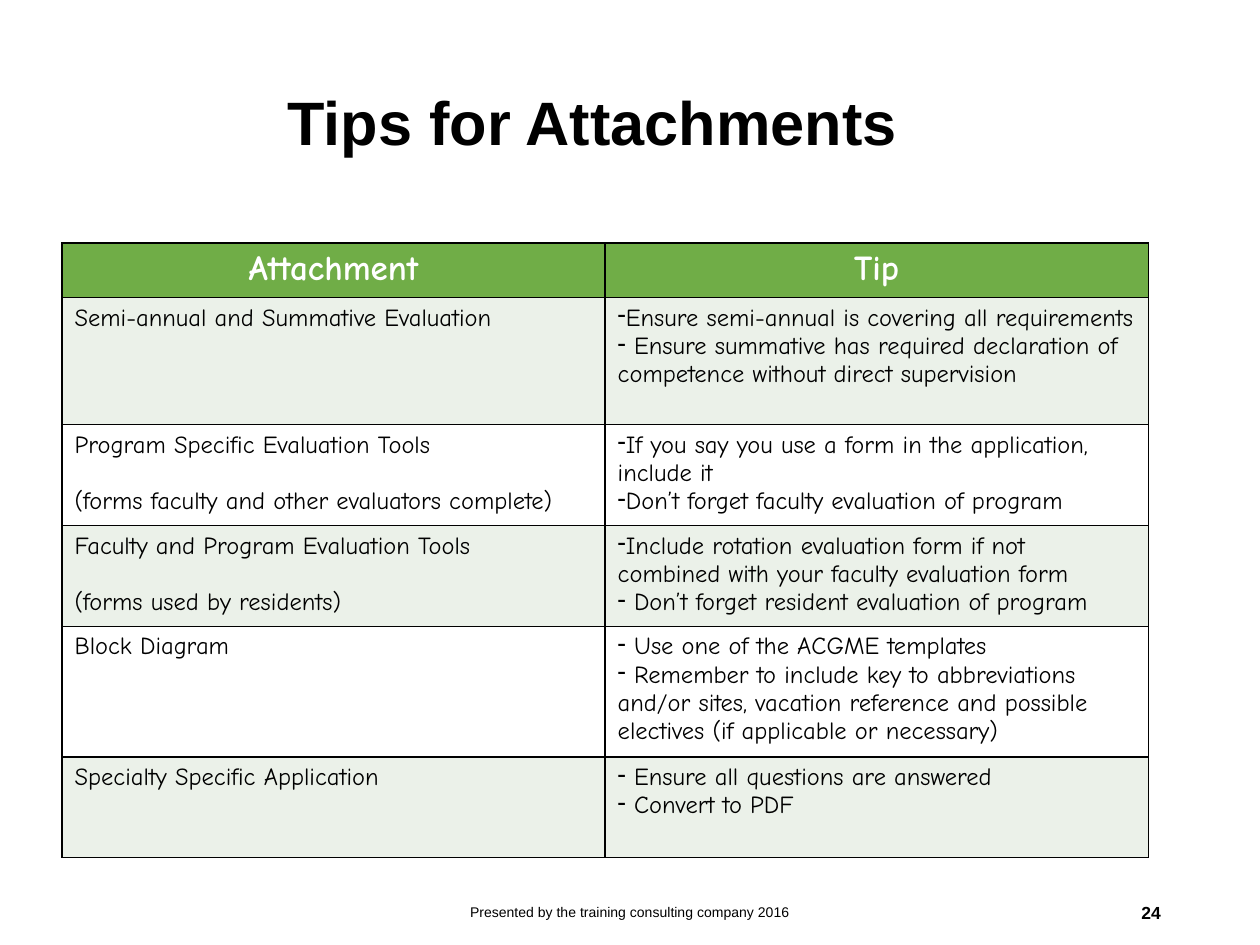
from lxml.etree import SubElement
from pptx import Presentation
from pptx.dml.color import RGBColor
from pptx.enum.text import MSO_ANCHOR, PP_ALIGN
from pptx.oxml.ns import qn
from pptx.util import Cm, Pt

COLORS = {
    "black": "000000",
    "white": "FFFFFF",
    "header": "70AD47",
    "band": "EBF1E9",
}
HEADINGS = ["Attachment", "Tip"]
ROWS = [
    (["Semi-annual and Summative Evaluation"],
     ["Ensure semi-annual is covering all requirements",
      " Ensure summative has required declaration of competence without direct supervision"]),
    (["Program Specific Evaluation Tools",
      "(forms faculty and other evaluators complete)"],
     ["If you say you use a form in the application, include it",
      "Don’t forget faculty evaluation of program"]),
    (["Faculty and Program Evaluation Tools",
      "(forms used by residents)"],
     ["Include rotation evaluation form if not combined with your faculty evaluation form",
      " Don’t forget resident evaluation of program"]),
    (["Block Diagram"],
     [" Use one of the ACGME templates",
      " Remember to include key to abbreviations and/or sites, vacation reference "
      "and possible electives (if applicable or necessary)"]),
    (["Specialty Specific Application"],
     [" Ensure all questions are answered",
      " Convert to PDF"]),
]
ROW_HEIGHTS = [1.05, 2.56, 2.03, 2.03, 2.56, 2.03]
COLUMN_WIDTH = 10.95


def add_text(paragraph, text, size, color="black", font="Arial", bold=False):
    run = paragraph.add_run()
    run.text = text
    run.font.name = font
    run.font.size = Pt(size)
    run.font.bold = bold
    run.font.color.rgb = RGBColor.from_string(COLORS[color])


def add_title(slide, text):
    title = slide.shapes.title
    title.left, title.top, title.width, title.height = Cm(5.54), Cm(0.69), Cm(18.14), Cm(3.68)
    title.text_frame.vertical_anchor = MSO_ANCHOR.MIDDLE
    paragraph = title.text_frame.paragraphs[0]
    paragraph.alignment = PP_ALIGN.LEFT
    paragraph.line_spacing = 0.9
    add_text(paragraph, text, 35, bold=True)


def add_footer(slide, left, width, text, size, alignment, bold=False):
    shape = slide.shapes.add_textbox(Cm(left), Cm(17.88), Cm(width), Cm(1.02))
    shape.text_frame.word_wrap = True
    shape.text_frame.vertical_anchor = MSO_ANCHOR.MIDDLE
    paragraph = shape.text_frame.paragraphs[0]
    paragraph.alignment = alignment
    add_text(paragraph, text, size, bold=bold)


def add_dash(paragraph):
    properties = paragraph._p.get_or_add_pPr()
    properties.set("marL", "0")
    properties.set("indent", "0")
    SubElement(properties, qn("a:buChar")).set("char", "-")


def style_cell(cell, fill):
    properties = cell._tc.get_or_add_tcPr()
    for side in ("lnL", "lnR", "lnT", "lnB"):
        line = SubElement(properties, qn(f"a:{side}"), w=str(Pt(1)))
        solid = SubElement(line, qn("a:solidFill"))
        SubElement(solid, qn("a:srgbClr"), val=COLORS["black"])
    cell.fill.solid()
    cell.fill.fore_color.rgb = RGBColor.from_string(COLORS[fill])


def fill_heading(cell, text):
    style_cell(cell, "header")
    paragraph = cell.text_frame.paragraphs[0]
    paragraph.alignment = PP_ALIGN.CENTER
    add_text(paragraph, text, 20, "white", "Comic Neue", True)


def fill_body(cell, lines, fill, dashed):
    style_cell(cell, fill)
    frame = cell.text_frame
    for index, text in enumerate(lines):
        paragraph = frame.add_paragraph() if index else frame.paragraphs[0]
        if dashed:
            add_dash(paragraph)
        elif index:
            paragraph.space_before = Pt(16)
        add_text(paragraph, text, 14, font="Comic Neue")


def add_tips_table(slide):
    frame = slide.shapes.add_table(
        len(ROW_HEIGHTS), len(HEADINGS), Cm(1.25), Cm(4.9),
        Cm(COLUMN_WIDTH * len(HEADINGS)), Cm(sum(ROW_HEIGHTS)))
    table = frame.table
    for column in table.columns:
        column.width = Cm(COLUMN_WIDTH)
    for row, height in zip(table.rows, ROW_HEIGHTS):
        row.height = Cm(height)
    for index, heading in enumerate(HEADINGS):
        fill_heading(table.cell(0, index), heading)
    for index, (attachment, tips) in enumerate(ROWS, start=1):
        fill = "band" if index % 2 else "white"
        fill_body(table.cell(index, 0), attachment, fill, False)
        fill_body(table.cell(index, 1), tips, fill, True)


def main():
    presentation = Presentation()
    presentation.slide_width = Cm(25.4)
    presentation.slide_height = Cm(19.05)
    slide = presentation.slides.add_slide(presentation.slide_layouts[5])
    add_title(slide, "Tips for Attachments")
    add_footer(slide, 8.41, 8.58, "Presented by the training consulting company 2016",
               8, PP_ALIGN.CENTER)
    add_footer(slide, 17.93, 5.72, "24", 10, PP_ALIGN.RIGHT, True)
    add_tips_table(slide)
    presentation.save("out.pptx")


if __name__ == "__main__":
    main()
